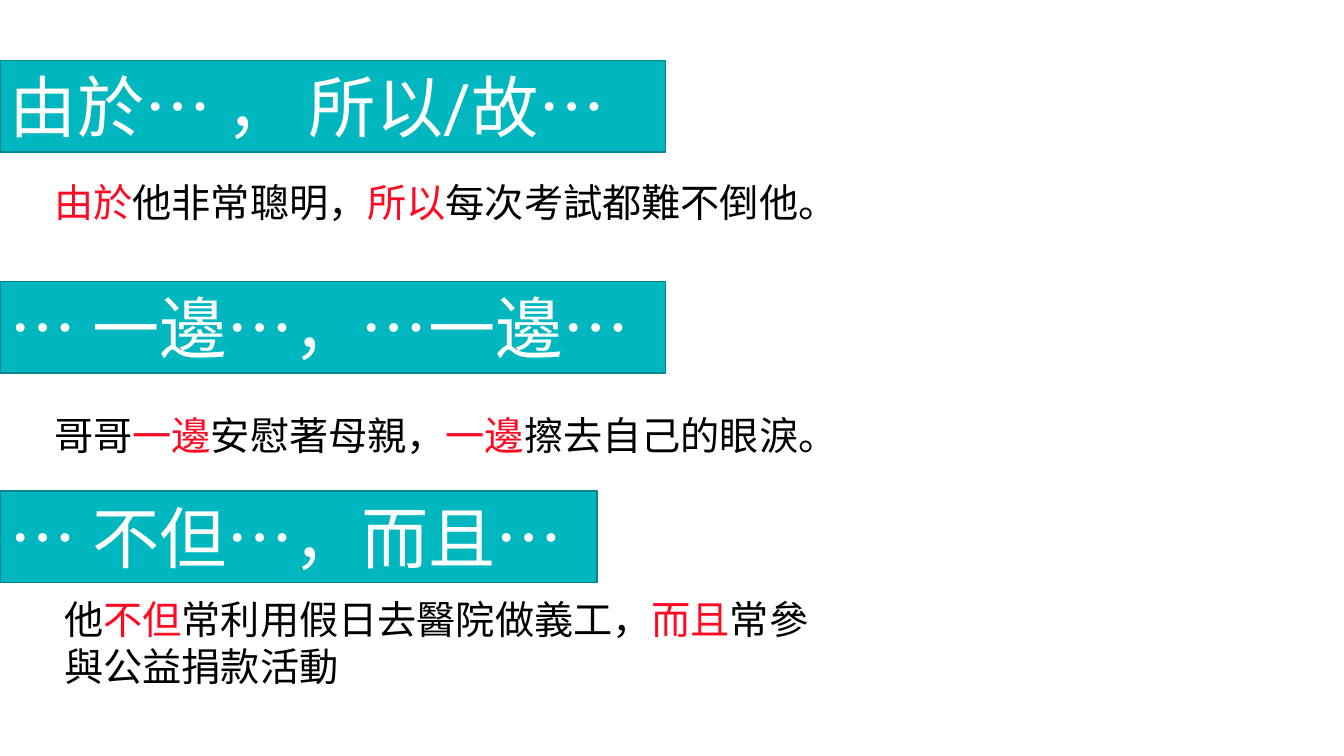
from pptx import Presentation
from pptx.dml.color import RGBColor
from pptx.enum.shapes import MSO_SHAPE
from pptx.enum.text import MSO_ANCHOR, MSO_AUTO_SIZE, PP_ALIGN
from pptx.util import Inches, Pt

TEAL = RGBColor(0x00, 0xB6, 0xBF)
DARK_TEAL = RGBColor(0x00, 0x87, 0x8D)
RED = RGBColor(0xFF, 0x0A, 0x22)
BLACK = RGBColor(0x00, 0x00, 0x00)
WHITE = RGBColor(0xFF, 0xFF, 0xFF)
FONT = "Roboto"


def write(frame, runs, size, wrap):
    """Fill a text frame with (text, colour) runs."""
    frame.word_wrap = wrap
    frame.auto_size = MSO_AUTO_SIZE.SHAPE_TO_FIT_TEXT
    paragraph = frame.paragraphs[0]
    paragraph.alignment = PP_ALIGN.LEFT
    for text, color in runs:
        run = paragraph.add_run()
        run.text = text
        run.font.name = FONT
        run.font.size = Pt(size)
        run.font.color.rgb = color


prs = Presentation()
prs.slide_width = Inches(13.33)
prs.slide_height = Inches(7.5)
slide = prs.slides.add_slide(prs.slide_layouts[6])

# Sentence patterns: text, top, width
patterns = [
    ("由於… ， 所以/故…", 0.6, 6.6),
    ("… 一邊…，…一邊…", 2.79, 6.6),
    ("… 不但…，而且…", 4.87, 5.92),
]
for pattern, top, width in patterns:
    banner = slide.shapes.add_shape(
        MSO_SHAPE.RECTANGLE, 0, Inches(top), Inches(width), Inches(0.91))
    banner.shadow.inherit = False
    banner.fill.solid()
    banner.fill.fore_color.rgb = TEAL
    banner.line.color.rgb = DARK_TEAL
    banner.line.width = Pt(1)
    banner.text_frame.vertical_anchor = MSO_ANCHOR.TOP
    write(banner.text_frame, [(pattern, WHITE)], 48, False)

# Example sentences: position, size, wrapping, runs with red conjunctions
examples = [
    (0.44, 1.72, 8.06, 0.57, False,
     [("由於", RED), ("他非常聰明，", BLACK),
      ("所以", RED), ("每次考試都難不倒他。", BLACK)]),
    (0.44, 4.03, 8.06, 0.57, False,
     [("哥哥", BLACK), ("一邊", RED), ("安慰著母親，", BLACK),
      ("一邊", RED), ("擦去自己的眼淚。", BLACK)]),
    (0.54, 5.86, 7.95, 1.04, True,
     [("他", BLACK), ("不但", RED), ("常利用假日去醫院做義工，", BLACK),
      ("而且", RED), ("常參與公益捐款活動", BLACK)]),
]
for left, top, width, height, wrap, runs in examples:
    sentence = slide.shapes.add_textbox(
        Inches(left), Inches(top), Inches(width), Inches(height))
    write(sentence.text_frame, runs, 28, wrap)

prs.save("out.pptx")
